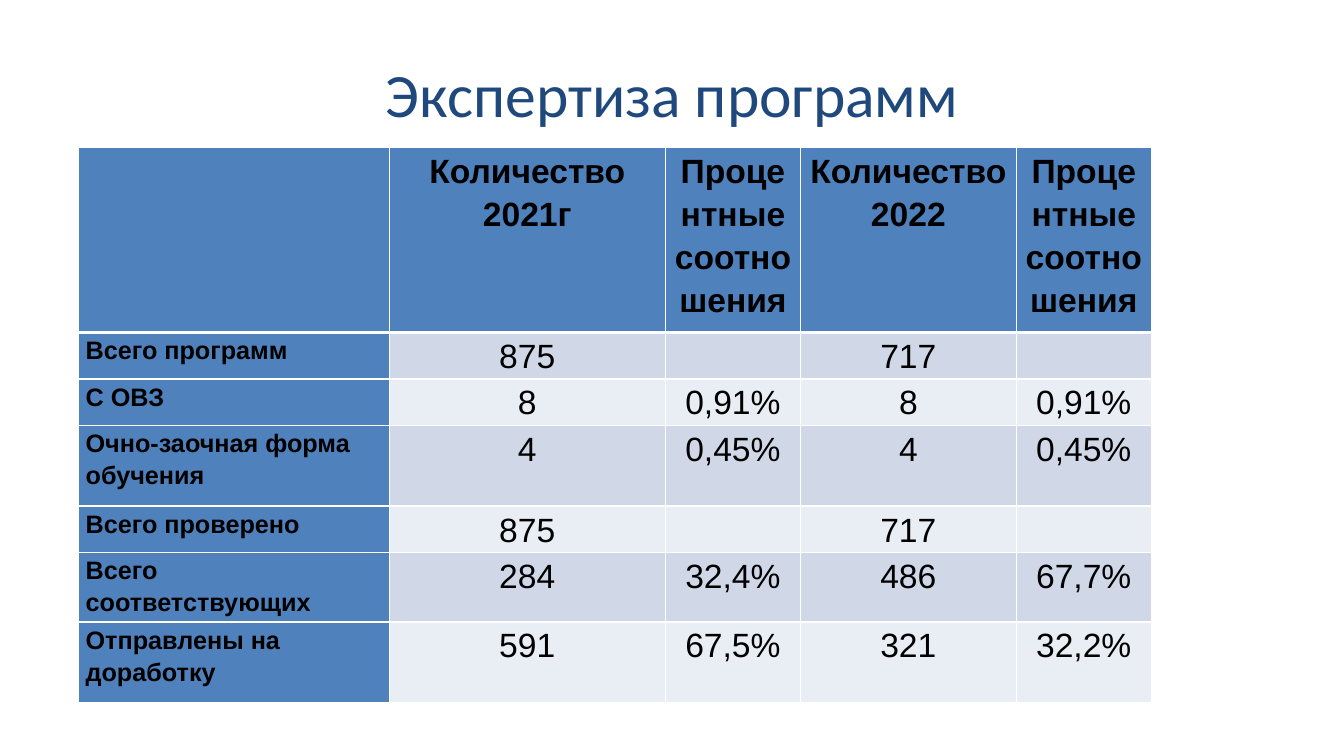
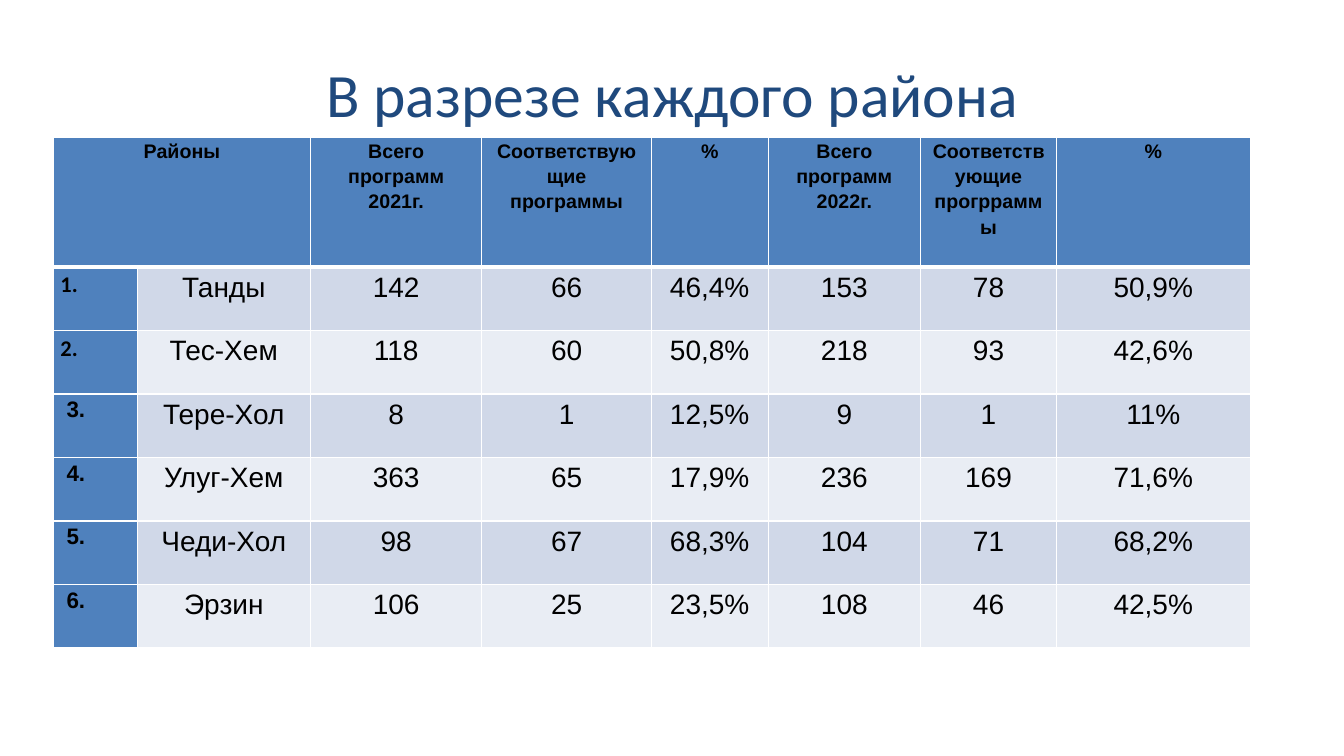
from lxml import etree
from pptx import Presentation
from pptx.dml.color import RGBColor
from pptx.enum.text import MSO_ANCHOR, PP_ALIGN
from pptx.oxml.ns import qn
from pptx.util import Inches, Pt

LEFT, CENTER = PP_ALIGN.LEFT, PP_ALIGN.CENTER
MIDDLE = MSO_ANCHOR.MIDDLE

WIDTH, HEIGHT = 13.33, 7.5
TITLE_BOX = (0.67, 0.3, 12, 1.25)
NAVY, BLUE, WHITE, BLACK = "1F497D", "4F81BD", "FFFFFF", "000000"
BANDS = ("D0D8E8", "E9EDF4")
THIN, THICK = 1, 3
TITLE_FONT = {"name": "Calibri", "size": Pt(44)}
CELL_MARGINS = {"margin_left": Inches(0.07), "margin_right": Inches(0.07),
                "margin_top": 0, "margin_bottom": 0}

REVIEW = {
    "title": "Экспертиза программ",
    "corner": (0.78, 1.46),
    "columns": (3.08, 2.74, 1.34, 2.14, 1.34),
    "heights": (1.7, 0.43, 0.43, 0.8, 0.43, 0.64, 0.8),
    "sizes": {"header": 24, "label": 18, "value": 24},
    "rows": (
        ("", "Количество\n2021г", "Процентные соотношения",
         "Количество\n2022", "Процентные соотношения"),
        ("Всего программ", "875", "", "717", ""),
        ("С ОВЗ", "8", "0,91%", "8", "0,91%"),
        ("Очно-заочная форма обучения", "4", "0,45%", "4", "0,45%"),
        ("Всего проверено", "875", "", "717", ""),
        ("Всего соответствующих", "284", "32,4%", "486", "67,7%"),
        ("Отправлены на доработку", "591", "67,5%", "321", "32,2%"),
    ),
}
DISTRICTS = {
    "title": "В разрезе каждого района",
    "corner": (0.53, 1.36),
    "columns": (0.83, 1.72, 1.7, 1.68, 1.16, 1.51, 1.35, 1.92),
    "heights": (1.29,) + (0.63,) * 6,
    "sizes": {"header": 14, "label": 16, "value": 20},
    "rows": (
        ("Районы", "", "Всего программ\n2021г.", "Соответствующие программы", "%",
         "Всего программ\n2022г.", "Соответствующие прогрраммы", "%"),
        ("1.", "Танды", "142", "66", "46,4%", "153", "78", "50,9%"),
        ("2.", "Тес-Хем", "118", "60", "50,8%", "218", "93", "42,6%"),
        ("3.", "Тере-Хол", "8", "1", "12,5%", "9", "1", "11%"),
        ("4.", "Улуг-Хем", "363", "65", "17,9%", "236", "169", "71,6%"),
        ("5.", "Чеди-Хол", "98", "67", "68,3%", "104", "71", "68,2%"),
        ("6.", "Эрзин", "106", "25", "23,5%", "108", "46", "42,5%"),
    ),
}


def color(value):
    return RGBColor.from_string(value)


def apply_format(target, values):
    for name, value in values.items():
        setattr(target, name, value)


def write_text(frame, text, font, ink, align, spacing=1.0):
    """Write one paragraph for each line of text."""
    for index, line in enumerate(text.split("\n")):
        para = frame.add_paragraph() if index else frame.paragraphs[0]
        apply_format(para, {"alignment": align, "line_spacing": spacing})
        if line:
            span = para.add_run()
            span.text = line
            apply_format(span.font, font)
            span.font.color.rgb = color(ink)


def add_title(page, text, box):
    frame = page.shapes.add_textbox(*map(Inches, box)).text_frame
    apply_format(frame, {"word_wrap": True, "vertical_anchor": MIDDLE})
    write_text(frame, text, TITLE_FONT, NAVY, CENTER)


def add_borders(cell, top, bottom):
    properties = cell._tc.get_or_add_tcPr()
    sides = {"L": THIN, "R": THIN, "T": top, "B": bottom}
    for side, points in sides.items():
        line = etree.SubElement(properties, qn(f"a:ln{side}"), w=str(Pt(points)))
        fill = etree.SubElement(line, qn("a:solidFill"))
        etree.SubElement(fill, qn("a:srgbClr"), val=WHITE)


def style_cell(cell, text, role, row, sizes):
    """Draw the rules, fill and text that the cell's role calls for."""
    add_borders(cell, THICK if row == 1 else THIN, THICK if row == 0 else THIN)
    cell.fill.solid()
    cell.fill.fore_color.rgb = color(
        BANDS[(row - 1) % 2] if role == "value" else BLUE)
    apply_format(cell, CELL_MARGINS)
    font = {"name": "Arial", "size": Pt(sizes[role]), "bold": role != "value"}
    if text in ("1.", "2."):
        font["name"] = "Calibri"
    elif role == "label" and text.endswith("."):
        cell.margin_left = Inches(0.13)
    write_text(cell.text_frame, text, font, BLACK,
               LEFT if role == "label" else CENTER, 1.15)


def add_grid(page, content):
    columns, heights = content["columns"], content["heights"]
    box = (*content["corner"], sum(columns), sum(heights))
    table = page.shapes.add_table(
        len(heights), len(columns), *map(Inches, box)).table
    apply_format(table, {"horz_banding": False, "first_row": False})
    for column, width in zip(table.columns, columns):
        column.width = Inches(width)
    for line, height in zip(table.rows, heights):
        line.height = Inches(height)
    for row, texts in enumerate(content["rows"]):
        for column, text in enumerate(texts):
            role = "header" if row == 0 else "value" if column else "label"
            style_cell(table.cell(row, column), text, role, row, content["sizes"])
    return table


def add_table_page(deck, content):
    page = deck.slides.add_slide(deck.slide_layouts[6])
    add_title(page, content["title"], TITLE_BOX)
    return add_grid(page, content)


def main():
    deck = Presentation()
    apply_format(deck, {"slide_width": Inches(WIDTH), "slide_height": Inches(HEIGHT)})
    add_table_page(deck, REVIEW)
    districts = add_table_page(deck, DISTRICTS)
    districts.cell(0, 0).merge(districts.cell(0, 1))
    deck.save("out.pptx")


if __name__ == "__main__":
    main()
